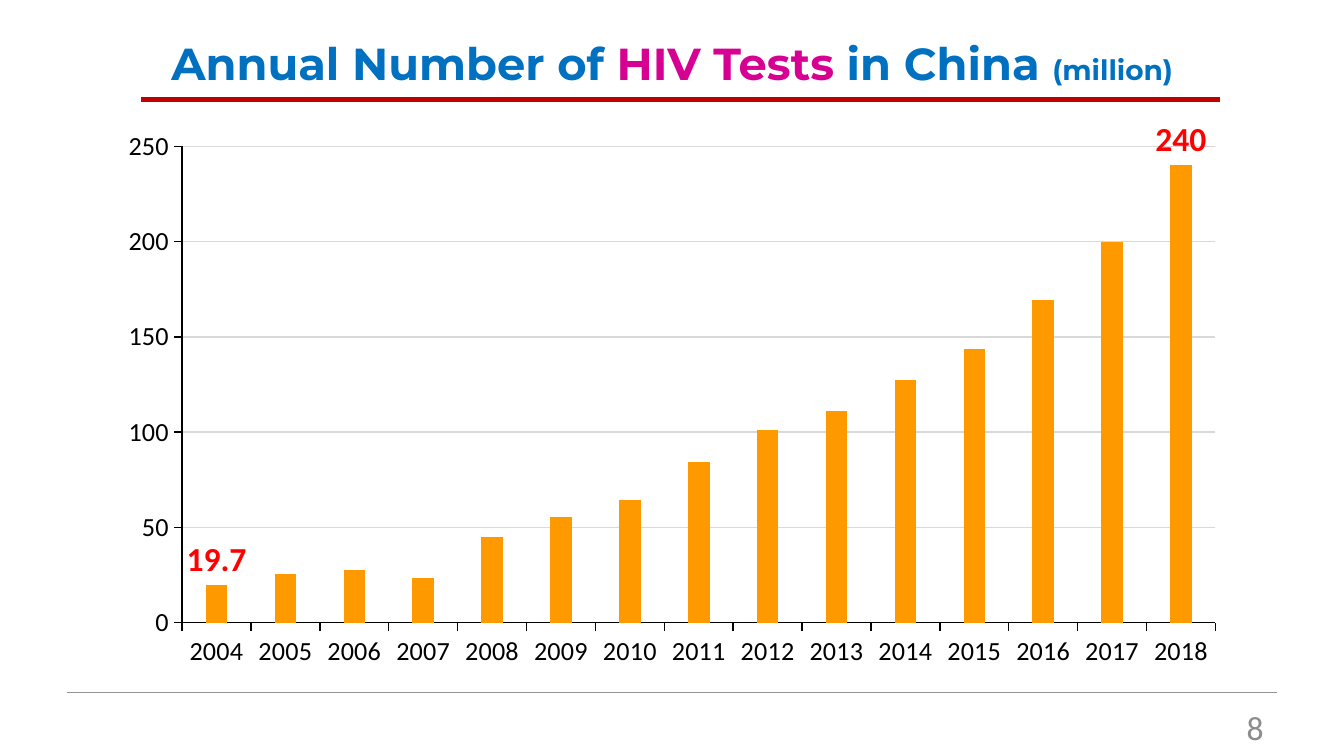
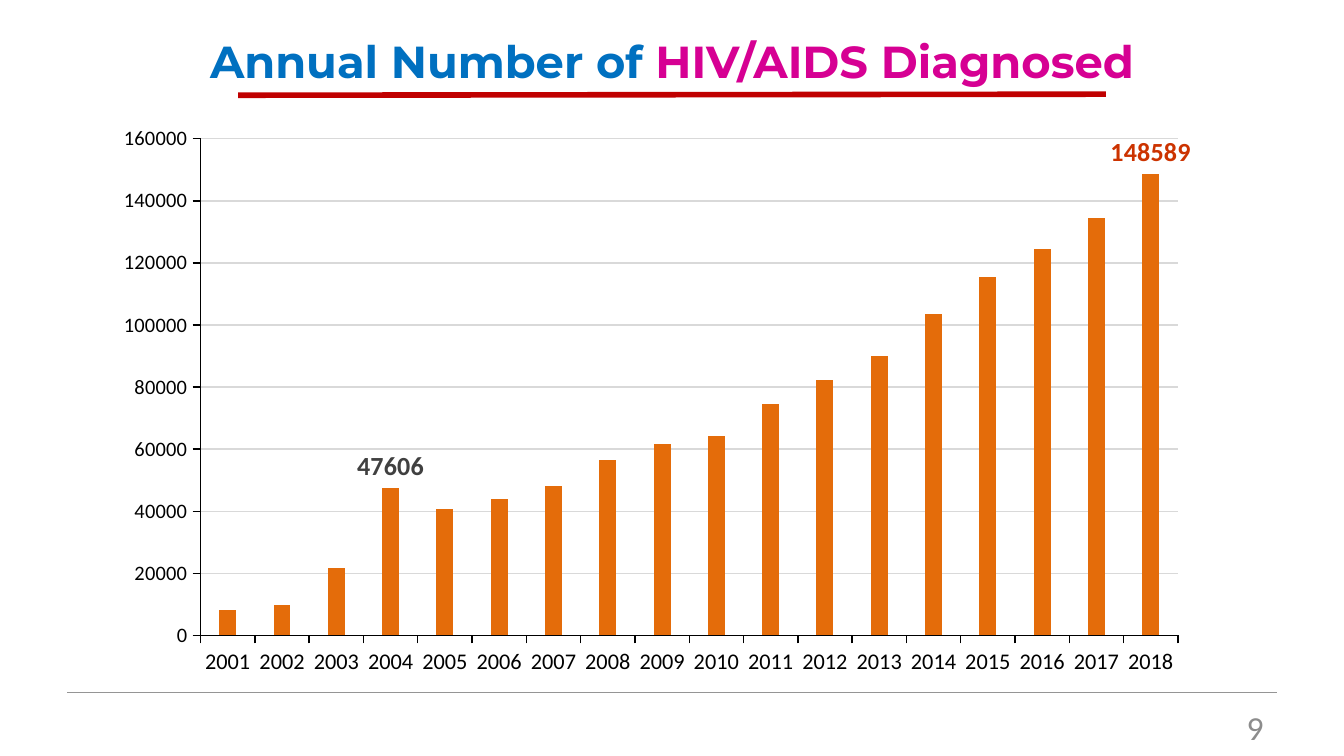
from dataclasses import dataclass

from lxml import etree
from pptx import Presentation
from pptx import util as u
from pptx.chart import data as chart_data
from pptx.dml.color import RGBColor
from pptx.enum import chart as ch
from pptx.enum import shapes, text
from pptx.oxml import parse_xml
from pptx.oxml.ns import nsdecls, qn


@dataclass(frozen=True)
class Theme:
    blue: str = "0070C0"
    magenta: str = "D60093"
    rule: str = "C00000"
    footer: str = "959595"
    number: str = "8C8C8C"
    black: str = "000000"
    grid: str = "D9D9D9"
    amber: str = "FF9900"
    orange: str = "E46C0A"
    red: str = "FF0000"
    brick: str = "CC3300"
    charcoal: str = "404040"
    title_font: str = "Montserrat"
    body_font: str = "Calibri"
    title_size: float = 24
    unit_size: float = 15
    number_size: float = 18
    chart_size: float = 10
    rule_width: float = 3
    axis_width: float = 0.75
    footer_width: float = 0.25


THEME = Theme()


def set_all(target, values):
    for name, value in values.items():
        setattr(target, name, value)


def set_font(font, color, **values):
    values["size"] = u.Pt(values["size"])
    set_all(font, values)
    font.color.rgb = RGBColor.from_string(color)


def set_line(line, color, width):
    line.color.rgb = RGBColor.from_string(color)
    line.width = u.Pt(width)


def set_plot_area(chart, fractions):
    """Fix the inner plot area as left, top, width and height fractions of the chart."""
    plot_area = chart.plots[0]._element.getparent()
    for old in plot_area.findall(qn("c:layout")):
        plot_area.remove(old)
    layout = parse_xml(f"<c:layout {nsdecls('c')}><c:manualLayout/></c:layout>")
    settings = {"layoutTarget": "inner", "xMode": "edge", "yMode": "edge"}
    settings.update(zip("xywh", fractions))
    for name, value in settings.items():
        etree.SubElement(layout[0], qn(f"c:{name}")).set("val", str(value))
    plot_area.insert(0, layout)


class SlideBuilder:
    def __init__(self, deck, theme):
        self.deck = deck
        self.theme = theme
        self.page = None

    def start_page(self, number):
        self.page = self.deck.slides.add_slide(self.deck.slide_layouts[5])
        theme = self.theme
        self.line((1.27, 13.08), (24.13, 13.08), theme.footer, theme.footer_width)
        box = self.page.shapes.add_textbox(*map(u.Cm, (18.21, 13.23, 5.92, 0.76)))
        box.text_frame.word_wrap = True
        para = box.text_frame.paragraphs[0]
        para.alignment = text.PP_ALIGN.RIGHT
        span = para.add_run()
        span.text = str(number)
        set_font(span.font, theme.number, size=theme.number_size, name=theme.body_font)

    def line(self, start, end, color, width):
        connector = self.page.shapes.add_connector(
            shapes.MSO_CONNECTOR.STRAIGHT, *map(u.Cm, start + end))
        set_line(connector.line, color, width)
        etree.SubElement(connector._element.spPr, qn("a:effectLst"))

    def title(self, area, spans, rule_start, rule_end):
        theme = self.theme
        box = self.page.shapes.title
        set_all(box, dict(zip(("left", "top", "width", "height"), map(u.Cm, area))))
        frame = box.text_frame
        set_all(frame, {
            "word_wrap": True,
            "auto_size": text.MSO_AUTO_SIZE.NONE,
            "vertical_anchor": text.MSO_ANCHOR.MIDDLE,
            "margin_left": u.Cm(0.18), "margin_right": u.Cm(0.18),
            "margin_top": u.Cm(0.08), "margin_bottom": u.Cm(0.08),
        })
        para = frame.paragraphs[0]
        para.alignment = text.PP_ALIGN.CENTER
        for words, color, size in spans:
            span = para.add_run()
            span.text = words
            set_font(span.font, color, size=size, name=theme.title_font, bold=True)
        self.line(rule_start, rule_end, theme.rule, theme.rule_width)

    def axis(self, axis, size):
        theme = self.theme
        set_all(axis, {"major_tick_mark": ch.XL_TICK_MARK.OUTSIDE,
                       "minor_tick_mark": ch.XL_TICK_MARK.NONE})
        set_font(axis.tick_labels.font, theme.black, size=size, name=theme.body_font)
        set_line(axis.format.line, theme.black, theme.axis_width)

    def column_chart(self, area, plot_area, first_year, values, color, step, top,
                     axis_sizes, label_size, label_colors):
        """Draw yearly columns; label_colors maps each labelled year to its colour."""
        theme = self.theme
        source = chart_data.CategoryChartData()
        source.categories = [str(first_year + i) for i in range(len(values))]
        source.add_series("Series 1", values)
        chart = self.page.shapes.add_chart(
            ch.XL_CHART_TYPE.COLUMN_CLUSTERED, *map(u.Cm, area), source).chart
        set_all(chart, {"has_title": False, "has_legend": False})
        set_font(chart.font, theme.black, size=theme.chart_size, name=theme.body_font)
        set_plot_area(chart, plot_area)

        for axis, size in zip((chart.category_axis, chart.value_axis), axis_sizes):
            self.axis(axis, size)
        set_all(chart.value_axis, {"minimum_scale": 0, "maximum_scale": top,
                                   "major_unit": step, "has_major_gridlines": True})
        set_line(chart.value_axis.major_gridlines.format.line,
                 theme.grid, theme.axis_width)

        plot = chart.plots[0]
        set_all(plot, {"gap_width": 219, "overlap": -27, "vary_by_categories": False})
        series = plot.series[0]
        series.format.fill.solid()
        series.format.fill.fore_color.rgb = RGBColor.from_string(color)
        series.data_labels.show_value = False
        for year, label_color in label_colors.items():
            label = series.points[year - first_year].data_label
            set_font(label.font, label_color, size=label_size,
                     name=theme.body_font, bold=True)
            label.position = ch.XL_LABEL_POSITION.OUTSIDE_END


def add_tests_page(builder):
    theme = builder.theme
    builder.start_page(8)
    builder.title(
        (2.01, 0.56, 21.39, 1.24),
        [("Annual Number of ", theme.blue, theme.title_size),
         ("HIV Tests ", theme.magenta, theme.title_size),
         ("in China ", theme.blue, theme.title_size),
         ("(million)", theme.blue, theme.unit_size)],
        (2.67, 1.88), (23.06, 1.88))
    builder.column_chart(
        area=(2.01, 2.24, 21.39, 10.59), plot_area=(0.067, 0.05, 0.913, 0.85),
        first_year=2004,
        values=[19.7, 25.3, 27.7, 23.3, 45, 55.6, 64.6, 84.2, 101.3, 111.1,
                127.6, 143.6, 169.2, 200, 240],
        color=theme.amber, step=50, top=250, axis_sizes=(14, 14),
        label_size=18, label_colors={2004: theme.red, 2018: theme.red})


def add_diagnosed_page(builder):
    theme = builder.theme
    builder.start_page(9)
    builder.title(
        (3.48, 0.53, 18.44, 1.24),
        [("Annual Number of ", theme.blue, theme.title_size),
         ("HIV/AIDS Diagnosed", theme.magenta, theme.title_size)],
        (4.5, 1.8), (20.9, 1.78))
    builder.column_chart(
        area=(2.34, 1.98, 20.17, 10.92), plot_area=(0.07, 0.059, 0.92, 0.86),
        first_year=2001,
        values=[8219, 9732, 21691, 47606, 40711, 44070, 48161, 56362, 61626,
                64338, 74517, 82434, 90119, 103501, 115465, 124555, 134512, 148589],
        color=theme.orange, step=20000, top=160000, axis_sizes=(12, 11),
        label_size=14, label_colors={2004: theme.charcoal, 2018: theme.brick})


def main():
    deck = Presentation()
    set_all(deck, {"slide_width": u.Cm(25.4), "slide_height": u.Cm(14.29)})
    builder = SlideBuilder(deck, THEME)
    add_tests_page(builder)
    add_diagnosed_page(builder)
    deck.save("out.pptx")


if __name__ == "__main__":
    main()
